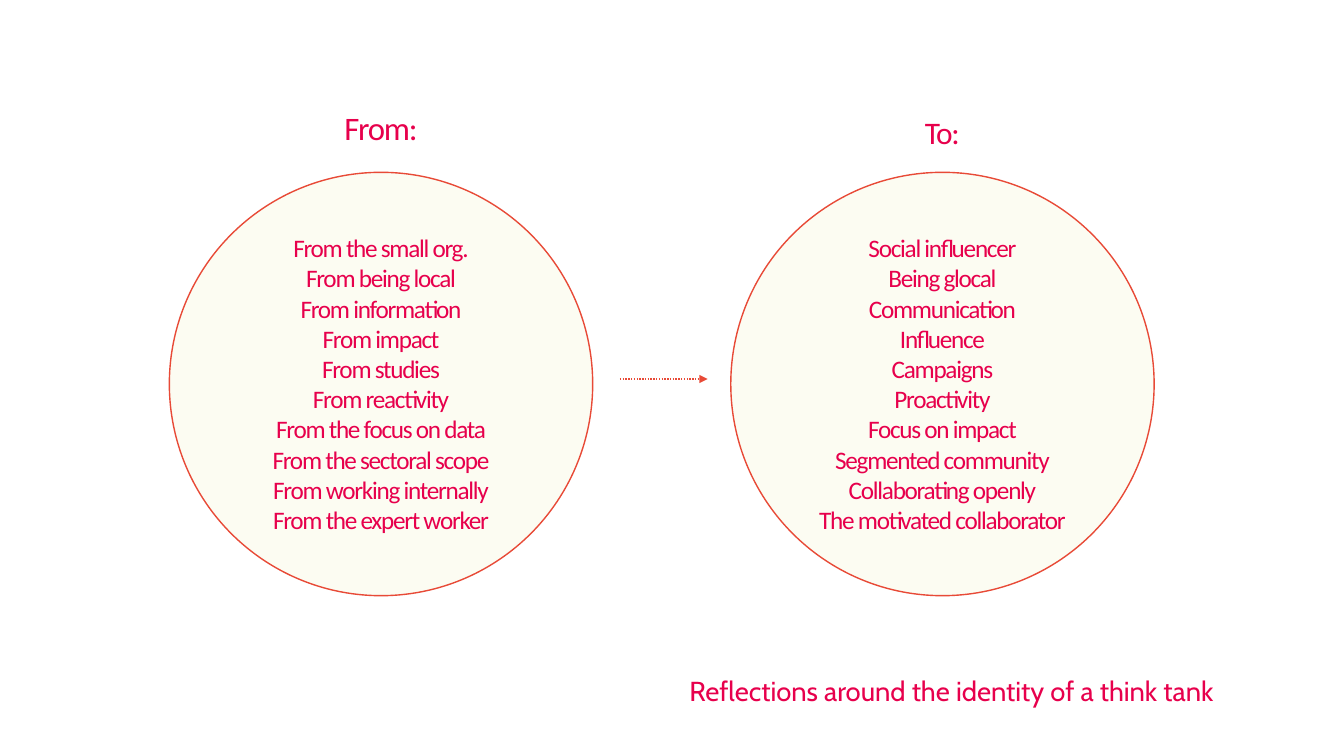
from lxml.etree import SubElement
from pptx import Presentation
from pptx.dml.color import RGBColor
from pptx.enum.dml import MSO_LINE
from pptx.enum.shapes import MSO_CONNECTOR, MSO_SHAPE
from pptx.enum.text import MSO_ANCHOR, MSO_AUTO_SIZE, PP_ALIGN
from pptx.oxml.ns import qn
from pptx.util import Inches, Pt

COLUMNS, ROWS = 160, 90
COMPARISON_LAYOUT = 4

SIDES = [
    {
        "center": 45.36,
        "heading": "From:",
        "heading_top": 9.12,
        "heading_size": 23.4,
        "heading_spacing": 0.8,
        "items": [
            "From the small org.", "From being local", "From information",
            "From impact", "From studies", "From reactivity",
            "From the focus on data", "From the sectoral scope",
            "From working internally", "From the expert worker",
        ],
    },
    {
        "center": 112.2,
        "heading": "To:",
        "heading_top": 9.48,
        "heading_size": 22.4,
        "heading_spacing": 0.9,
        "items": [
            "Social influencer", "Being glocal", "Communication",
            "Influence", "Campaigns", "Proactivity", "Focus on impact",
            "Segmented community", "Collaborating openly",
            "The motivated collaborator",
        ],
    },
]


def color(hex_string):
    return RGBColor.from_string(hex_string)


class ComparisonPage:
    """Style and slide, measured in grid columns and rows."""

    ink = "E7004C"
    outline = "E84A37"
    disc = "FCFCF1"
    title_font = "Cabin"
    body_font = "Calibri"

    def __init__(self, deck):
        self.column = deck.slide_width / COLUMNS
        self.row = deck.slide_height / ROWS
        self.page = deck.slides.add_slide(deck.slide_layouts[COMPARISON_LAYOUT])

    def place(self, left, top, width, height):
        return (round(left * self.column), round(top * self.row),
                round(width * self.column), round(height * self.row))

    def text(self, box, area, lines, size, font, align=PP_ALIGN.CENTER,
             anchor=MSO_ANCHOR.MIDDLE, line_spacing=1.0, tracking=0):
        """Fill a placeholder; tracking is in hundredths of a point."""
        box.left, box.top, box.width, box.height = self.place(*area)
        frame = box.text_frame
        frame.margin_left = frame.margin_right = 0
        frame.margin_top = frame.margin_bottom = 0
        frame.word_wrap = True
        frame.auto_size = MSO_AUTO_SIZE.NONE
        frame.vertical_anchor = anchor
        frame.text = "\n".join(lines)
        for paragraph in frame.paragraphs:
            paragraph.alignment = align
            paragraph.line_spacing = line_spacing
            paragraph.space_before = Pt(0)
            properties = paragraph._p.get_or_add_pPr()
            properties.set("marL", "0")
            properties.set("indent", "0")
            SubElement(properties, qn("a:buNone"))
            paragraph.font.name = font
            paragraph.font.size = Pt(size)
            paragraph.font.bold = False
            paragraph.font.color.rgb = color(self.ink)
            paragraph.font._element.set("spc", str(tracking))

    def title(self, words):
        self.text(self.page.shapes.title, (82.08, 81.36, 76.8, 2.88), [words],
                  19.6, self.title_font, PP_ALIGN.LEFT, MSO_ANCHOR.TOP, 0.7)

    def heading(self, index, center, top, words, size, line_spacing):
        self.text(self.page.placeholders[index],
                  (center - 25.2, top, 50.4, 13.08), [words], size,
                  self.body_font, line_spacing=line_spacing, tracking=-90)

    def item_list(self, index, center, items):
        self.text(self.page.placeholders[index],
                  (center - 37.08, 26.04, 74.16, 39.24), items, 18,
                  self.body_font, tracking=-90)

    def circle(self, center):
        """Draw a translucent disc behind the text."""
        disc = self.page.shapes.add_shape(
            MSO_SHAPE.OVAL, *self.place(center - 25.2, 20.52, 50.4, 50.4))
        disc.shadow.inherit = False
        disc.fill.solid()
        disc.fill.fore_color.rgb = color(self.disc)
        fill_color = disc._element.spPr.find(qn("a:solidFill"))[0]
        SubElement(fill_color, qn("a:alpha"), val="90000")
        disc.line.color.rgb = color(self.outline)
        disc.line.width = Pt(1)
        self.page.shapes._spTree.insert(2, disc._element)

    def arrow(self, start, end, row):
        left, top, width, _ = self.place(start, row, end - start, 0)
        arrow = self.page.shapes.add_connector(
            MSO_CONNECTOR.STRAIGHT, left, top, left + width, top)
        arrow.line.color.rgb = color(self.outline)
        arrow.line.width = Pt(1)
        arrow.line.dash_style = MSO_LINE.ROUND_DOT
        SubElement(arrow.line._get_or_add_ln(), qn("a:tailEnd"), type="triangle")
        SubElement(arrow._element.spPr, qn("a:effectLst"))


def main():
    deck = Presentation()
    deck.slide_width, deck.slide_height = Inches(13.33), Inches(7.5)
    page = ComparisonPage(deck)
    page.title("Reflections around the identity of a think tank")
    for number, side in enumerate(SIDES):
        center = side["center"]
        page.circle(center)
        page.heading(2 * number + 1, center, side["heading_top"], side["heading"],
                     side["heading_size"], side["heading_spacing"])
        page.item_list(2 * number + 2, center, side["items"])
    page.arrow(73.8, 84.24, 45.12)
    deck.save("out.pptx")


if __name__ == "__main__":
    main()
